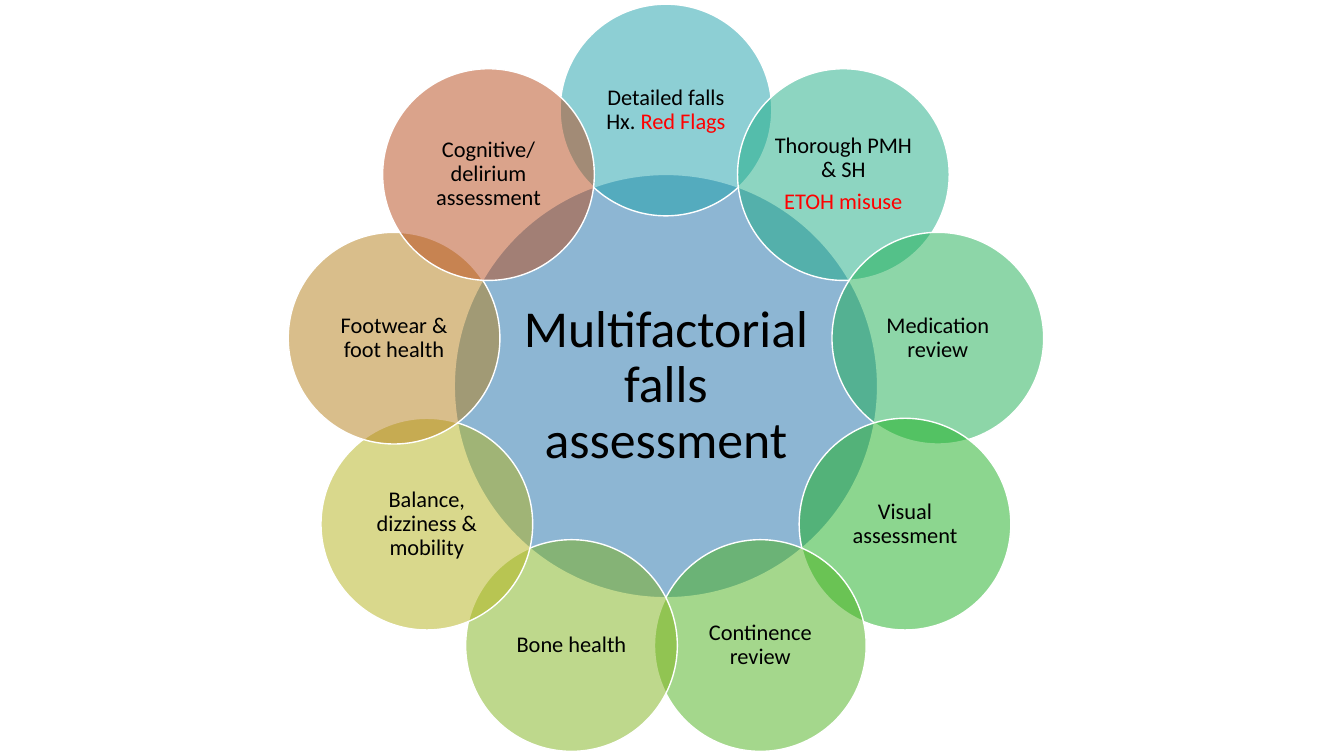
"""Build a slide with nine overlapping circles around a falls assessment hub."""
from dataclasses import dataclass
from math import cos, radians, sin, sqrt

from lxml.etree import SubElement
from pptx import Presentation
from pptx.dml.color import RGBColor as RGB
from pptx.enum.shapes import MSO_SHAPE as SHAPE
from pptx.enum.text import MSO_ANCHOR as ANCHOR, MSO_AUTO_SIZE as AUTO, PP_ALIGN as ALIGN
from pptx.oxml.ns import qn
from pptx.util import Pt

COLORS = {"text": "000000", "flag": "FF0000", "line": "FFFFFF", "hub": "1D6FA9",
          "history": "1DA1AB", "social": "1CAC84", "medication": "1CAE53",
          "vision": "1BAF20", "continence": "4AB11B", "bone": "7FB21A",
          "balance": "B4B31A", "feet": "B57F19", "cognition": "B74919"}
FONT = "Calibri"
CENTER_X, CENTER_Y, ORBIT = 475.7, 275.8, 197.2
HUB_SIZE, PETAL_SIZE = 302.4, 151.2
HUB_TEXT, PETAL_TEXT = 37, 16


@dataclass
class Run:
    """A piece of text in one colour."""
    text: str
    color: str = "text"


@dataclass
class Petal:
    """An outer circle with its paragraphs of runs."""
    color: str
    paras: list[list[Run]]


PETALS = [
    Petal("history", [[Run("Detailed falls Hx. "), Run("Red Flags", "flag")]]),
    Petal("social", [[Run("Thorough PMH & SH")], [Run("ETOH misuse", "flag")]]),
    Petal("medication", [[Run("Medication review")]]),
    Petal("vision", [[Run("Visual assessment")]]),
    Petal("continence", [[Run("Continence review")]]),
    Petal("bone", [[Run("Bone health")]]),
    Petal("balance", [[Run("Balance, dizziness & mobility")]]),
    Petal("feet", [[Run("Footwear & foot health")]]),
    Petal("cognition", [[Run("Cognitive/ delirium assessment")]]),
]


def add_circle(s, x: float, y: float, size: float, color: str):
    """Draw a half-transparent circle centred on a point."""
    sp = s.shapes.add_shape(SHAPE.OVAL, Pt(x - size / 2), Pt(y - size / 2), Pt(size), Pt(size))
    sp.shadow.inherit = False
    sp.fill.solid()
    sp.fill.fore_color.rgb = RGB.from_string(COLORS[color])
    rgb = sp.fill._xPr.find(qn("a:solidFill")).find(qn("a:srgbClr"))
    SubElement(rgb, qn("a:alpha"), val="50000")
    sp.line.color.rgb = RGB.from_string(COLORS["line"])
    sp.line.width = Pt(1)
    return sp


def write(sp, paras: list[list[Run]], size: float) -> None:
    """Fill a shape with centred paragraphs, run by run."""
    tf = sp.text_frame
    tf.word_wrap = True
    tf.auto_size = AUTO.NONE
    tf.vertical_anchor = ANCHOR.MIDDLE
    tf.margin_left = tf.margin_right = tf.margin_top = tf.margin_bottom = Pt(size / 10)
    for i, runs in enumerate(paras):
        p = tf.add_paragraph() if i else tf.paragraphs[0]
        p.alignment = ALIGN.CENTER
        p.line_spacing = 0.9
        p.space_before = Pt(0)
        p.space_after = Pt(size * 0.35)
        for run in runs:
            r = p.add_run()
            r.text = run.text
            r.font.name = FONT
            r.font.size = Pt(size)
            r.font.color.rgb = RGB.from_string(COLORS[run.color])


def add_hub(s) -> None:
    """Draw the central circle and lay the title over it."""
    hub = add_circle(s, CENTER_X, CENTER_Y, HUB_SIZE, "hub")
    title = s.shapes.title
    side = HUB_SIZE / sqrt(2)
    title.left, title.top = Pt(CENTER_X - side / 2), Pt(CENTER_Y - side / 2)
    title.width = title.height = Pt(side)
    hub._element.addnext(title._element)
    write(title, [[Run("Multifactorial falls assessment")]], HUB_TEXT)


def main() -> None:
    """Create and save the presentation."""
    prs = Presentation()
    prs.slide_width, prs.slide_height = Pt(960), Pt(540)
    s = prs.slides.add_slide(prs.slide_layouts[5])
    add_hub(s)
    for i, petal in enumerate(PETALS):
        angle = radians(360 / len(PETALS) * i)
        x, y = CENTER_X + ORBIT * sin(angle), CENTER_Y - ORBIT * cos(angle)
        write(add_circle(s, x, y, PETAL_SIZE, petal.color), petal.paras, PETAL_TEXT)
    prs.save("out.pptx")


if __name__ == "__main__":
    main()
